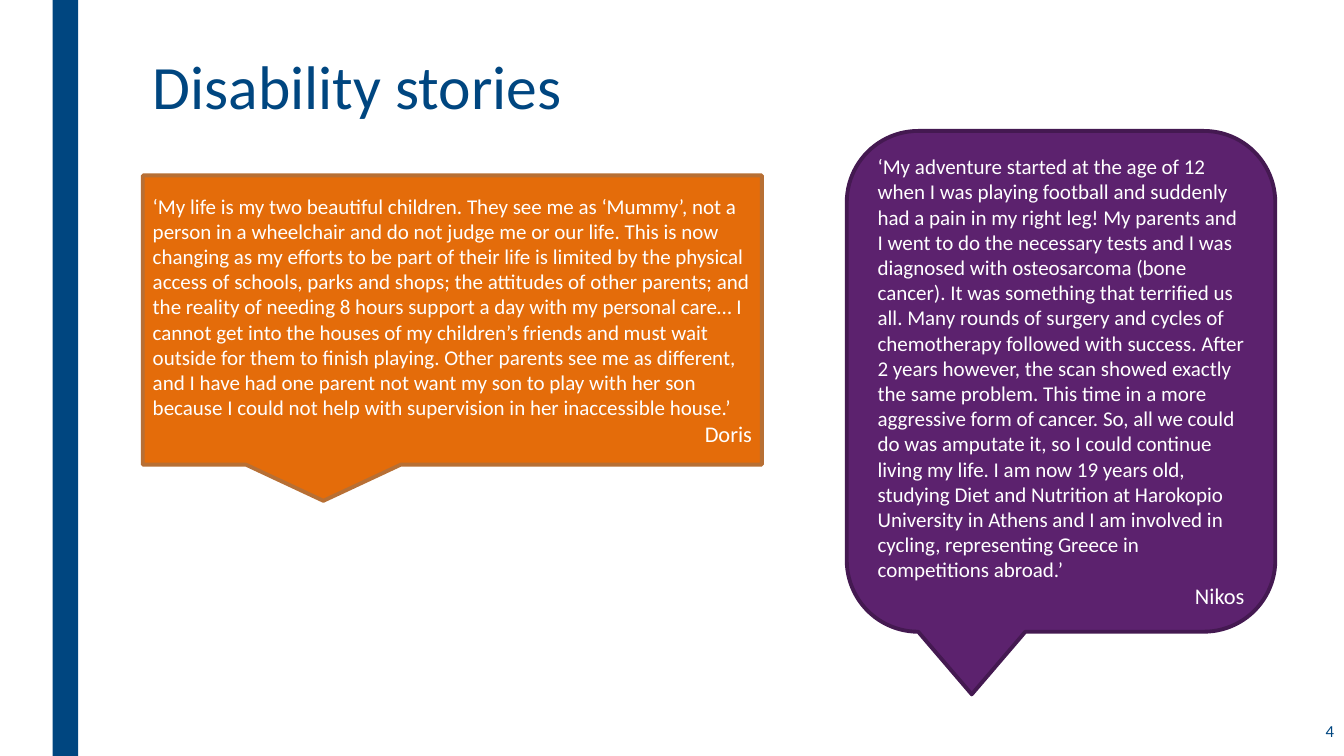
from pptx import Presentation
from pptx.dml.color import RGBColor
from pptx.enum.shapes import MSO_SHAPE
from pptx.enum.text import MSO_ANCHOR, PP_ALIGN
from pptx.util import Cm, Pt

RECTANGLE = MSO_SHAPE.RECTANGLE
SQUARE_CALLOUT = MSO_SHAPE.RECTANGULAR_CALLOUT
ROUND_CALLOUT = MSO_SHAPE.ROUNDED_RECTANGULAR_CALLOUT
TOP, MIDDLE = MSO_ANCHOR.TOP, MSO_ANCHOR.MIDDLE
LEFT, RIGHT = PP_ALIGN.LEFT, PP_ALIGN.RIGHT

FONT = "Calibri"
NAVY = RGBColor(0x00, 0x46, 0x80)
ORANGE = RGBColor(0xE4, 0x6C, 0x0A)
BROWN = RGBColor(0xB7, 0x6F, 0x34)
PURPLE = RGBColor(0x5C, 0x22, 0x6E)
DARK_PURPLE = RGBColor(0x44, 0x19, 0x51)
WHITE = RGBColor(0xFF, 0xFF, 0xFF)

SLIDE_WIDTH, SLIDE_HEIGHT = 33.87, 19.05
TITLE = "Disability stories"
PAGE_NUMBER = "4"
STORIES = [
    {
        "quote": "‘My life is my two beautiful children. They see me as ‘Mummy’, not a person in a "
                 "wheelchair and do not judge me or our life. This is now changing as my efforts to be "
                 "part of their life is limited by the physical access of schools, parks and shops; the "
                 "attitudes of other parents; and the reality of needing 8 hours support a day with my "
                 "personal care… I cannot get into the houses of my children’s friends and must wait "
                 "outside for them to finish playing. Other parents see me as different, and I have had "
                 "one parent not want my son to play with her son because I could not help with "
                 "supervision in her inaccessible house.’",
        "teller": "Doris",
        "kind": SQUARE_CALLOUT,
        "place": (3.6, 4.42, 15.6, 7.29),
        "fill": ORANGE,
        "border": BROWN,
    },
    {
        "quote": "‘My adventure started at the age of 12 when I was playing football and suddenly had "
                 "a pain in my right leg! My parents and I went to do the necessary tests and I was "
                 "diagnosed with osteosarcoma (bone cancer). It was something that terrified us all. "
                 "Many rounds of surgery and cycles of chemotherapy followed with success. After "
                 "2 years however, the scan showed exactly the same problem. This time in a more "
                 "aggressive form of cancer. So, all we could do was amputate it, so I could continue "
                 "living my life. I am now 19 years old, studying Diet and Nutrition at Harokopio "
                 "University in Athens and I am involved in cycling, representing Greece in "
                 "competitions abroad.’",
        "teller": "Nikos",
        "kind": ROUND_CALLOUT,
        "place": (21.34, 3.3, 10.8, 12.62),
        "fill": PURPLE,
        "border": DARK_PURPLE,
    },
]


def write(box, lines, color, anchor=MIDDLE, spacing=None):
    frame = box.text_frame
    frame.word_wrap = True
    frame.vertical_anchor = anchor
    for index, (text, size, align) in enumerate(lines):
        para = frame.add_paragraph() if index else frame.paragraphs[0]
        para.alignment = align
        para.line_spacing = spacing
        span = para.add_run()
        span.text = text
        span.font.name = FONT
        span.font.size = Pt(size)
        span.font.color.rgb = color


def add_filled(page, kind, place, fill, border=None):
    shape = page.shapes.add_shape(kind, *map(Cm, place))
    shape.shadow.inherit = False
    shape.fill.solid()
    shape.fill.fore_color.rgb = fill
    if border is None:
        shape.line.fill.background()
    else:
        shape.line.color.rgb = border
        shape.line.width = Pt(2.75)
    return shape


deck = Presentation()
deck.slide_width, deck.slide_height = Cm(SLIDE_WIDTH), Cm(SLIDE_HEIGHT)
page = deck.slides.add_slide(deck.slide_layouts[6])

add_filled(page, RECTANGLE, (1.33, 0, 0.64, SLIDE_HEIGHT), NAVY)

number_box = page.shapes.add_textbox(Cm(29.42), Cm(17.86), Cm(4.45), Cm(1.12))
write(number_box, [(PAGE_NUMBER, 12, RIGHT)], NAVY)

for story in STORIES:
    callout = add_filled(page, story["kind"], story["place"], story["fill"], story["border"])
    write(callout, [(story["quote"], 15, LEFT), (story["teller"], 16, RIGHT)], WHITE)

title_box = page.shapes.add_textbox(Cm(3.6), Cm(1.32), Cm(26.67), Cm(2.84))
write(title_box, [(TITLE, 44, LEFT)], NAVY, anchor=TOP, spacing=0.89)

deck.save("out.pptx")
